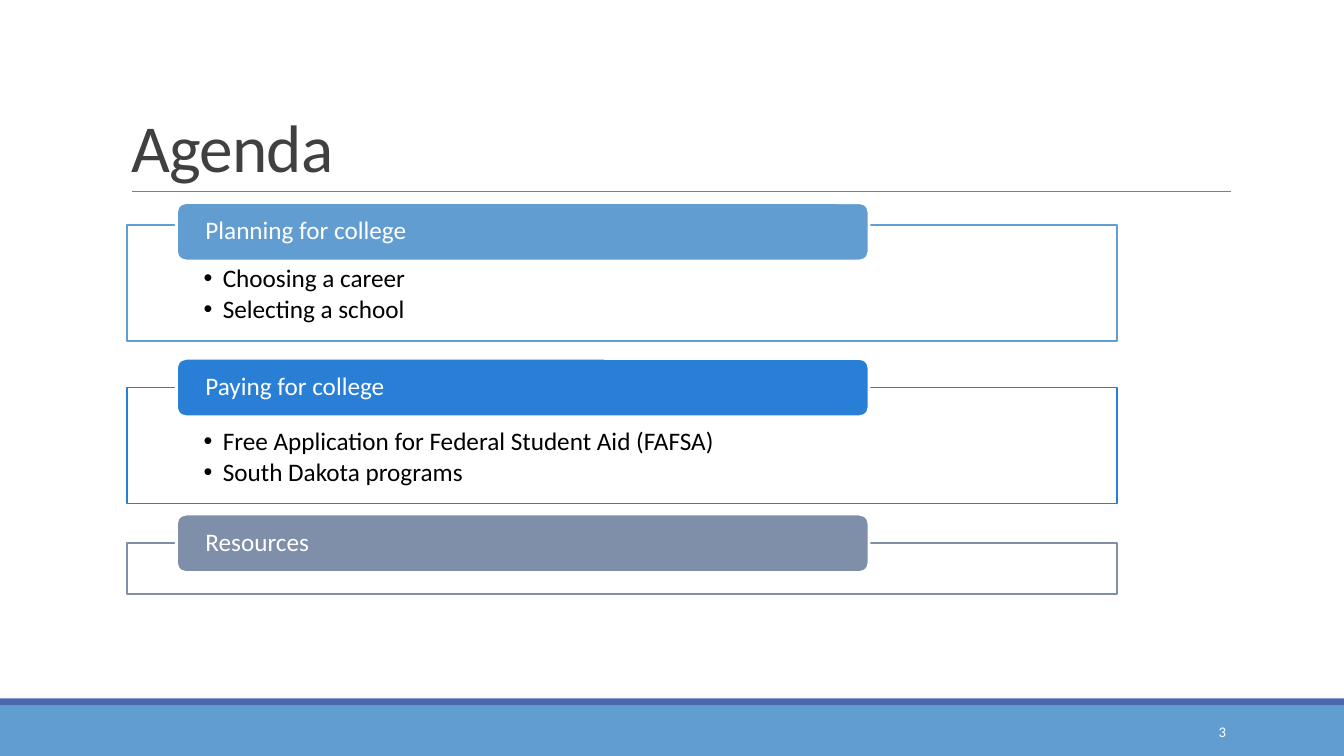
from dataclasses import dataclass

from lxml.etree import SubElement
from pptx import Presentation
from pptx.dml.color import RGBColor
from pptx.enum.shapes import MSO_CONNECTOR, MSO_SHAPE
from pptx.enum.text import MSO_ANCHOR, MSO_AUTO_SIZE, PP_ALIGN
from pptx.oxml.ns import qn
from pptx.util import Inches, Pt

TITLE = "Agenda"
PAGE_NUMBER = "3"
# heading, topics, accent, drop of the panel below the top of its tab, panel height
SECTIONS = [
    ("Planning for college", ["Choosing a career", "Selecting a school"], "629DD1", 0.22, 1.15),
    ("Paying for college",
     ["Free Application for Federal Student Aid (FAFSA)", "South Dakota programs"],
     "297FD5", 0.29, 1.15),
    ("Resources", [], "7F8FA9", 0.29, 0.5),
]


@dataclass(frozen=True)
class Theme:
    font: str = "Calibri"
    white: str = "FFFFFF"
    body: str = "000000"
    title: str = "404040"
    rule: str = "808080"
    footer: str = "629DD1"
    stripe: str = "4A66AC"
    title_size: float = 48
    text_size: float = 18
    number_size: float = 10.5


THEME = Theme()
WIDTH, HEIGHT = 13.33, 7.5
FOOTER_HEIGHT, STRIPE_HEIGHT = 0.5, 0.07
PANEL_LEFT, PANEL_WIDTH = 1.26, 9.82
TAB_LEFT, TAB_WIDTH, TAB_HEIGHT = 1.75, 6.87, 0.58
FIRST_TAB_TOP, TAB_PITCH = 2.01, 1.545
BULLET_INDENT = 0.19


def color(value):
    return RGBColor.from_string(value)


def add_box(slide, kind, box, fill, line=None, line_width=1.0, opacity=None):
    shape = slide.shapes.add_shape(kind, *map(Inches, box))
    shape.shadow.inherit = False
    shape.fill.solid()
    shape.fill.fore_color.rgb = color(fill)
    if opacity is not None:
        srgb = shape.fill._xPr.find(qn("a:solidFill")).find(qn("a:srgbClr"))
        SubElement(srgb, qn("a:alpha"), val=str(opacity * 1000))
    if line:
        shape.line.color.rgb = color(line)
        shape.line.width = Pt(line_width)
    else:
        shape.line.fill.background()
    return shape


def write(shape, lines, *, size, ink, align=PP_ALIGN.LEFT, anchor=MSO_ANCHOR.MIDDLE,
          insets=(0.1, 0.05, 0.1, 0.05), spacing=1.0, after=0, bullet=False, tracking=None):
    frame = shape.text_frame
    frame.word_wrap = True
    frame.auto_size = MSO_AUTO_SIZE.NONE
    frame.vertical_anchor = anchor
    (frame.margin_left, frame.margin_top,
     frame.margin_right, frame.margin_bottom) = map(Inches, insets)
    for index, line in enumerate(lines):
        paragraph = frame.add_paragraph() if index else frame.paragraphs[0]
        paragraph.alignment = align
        paragraph.line_spacing = spacing
        paragraph.space_before = Pt(0)
        paragraph.space_after = Pt(after)
        run = paragraph.add_run()
        run.text = line
        run.font.name = THEME.font
        run.font.size = Pt(size)
        run.font.color.rgb = color(ink)
        if tracking is not None:
            run.font._element.set("spc", str(int(tracking * 100)))
        if bullet:
            properties = paragraph._p.get_or_add_pPr()
            properties.set("marL", str(Inches(BULLET_INDENT)))
            properties.set("indent", str(-Inches(BULLET_INDENT)))
            SubElement(properties, qn("a:buFont"), typeface="Arial")
            SubElement(properties, qn("a:buChar"), char="•")


def add_frame(slide):
    """Footer bands, title, title rule and page number."""
    footer_top = HEIGHT - FOOTER_HEIGHT
    add_box(slide, MSO_SHAPE.RECTANGLE, (0, footer_top, WIDTH, FOOTER_HEIGHT), THEME.footer)
    add_box(slide, MSO_SHAPE.RECTANGLE,
            (0, footer_top - STRIPE_HEIGHT, WIDTH, STRIPE_HEIGHT), THEME.stripe)

    rule = slide.shapes.add_connector(
        MSO_CONNECTOR.STRAIGHT, *map(Inches, (1.31, 1.9, 12.21, 1.9)))
    rule.line.color.rgb = color(THEME.rule)
    rule.line.width = Pt(0.5)
    SubElement(rule._element.spPr, qn("a:effectLst"))

    title = slide.shapes.title
    title.left, title.top, title.width, title.height = map(Inches, (1.2, 0.31, 11, 1.59))
    write(title, [TITLE], size=THEME.title_size, ink=THEME.title,
          anchor=MSO_ANCHOR.BOTTOM, spacing=0.85, tracking=-0.5)

    number = slide.shapes.add_textbox(*map(Inches, (10.83, 7.06, 1.43, 0.4)))
    write(number, [PAGE_NUMBER], size=THEME.number_size, ink=THEME.white, align=PP_ALIGN.RIGHT)


def add_section(slide, tab_top, heading, topics, accent, panel_drop, panel_height):
    panel = add_box(slide, MSO_SHAPE.RECTANGLE,
                    (PANEL_LEFT, tab_top + panel_drop, PANEL_WIDTH, panel_height),
                    THEME.white, line=accent, line_width=1.25, opacity=90)
    if topics:
        write(panel, topics, size=THEME.text_size, ink=THEME.body, anchor=MSO_ANCHOR.TOP,
              insets=(0.76, 0.41, 0.76, 0.14), spacing=0.9, after=2.7, bullet=True)
    tab = add_box(slide, MSO_SHAPE.ROUNDED_RECTANGLE,
                  (TAB_LEFT, tab_top, TAB_WIDTH, TAB_HEIGHT),
                  accent, line=THEME.white, line_width=2)
    write(tab, [heading], size=THEME.text_size, ink=THEME.white,
          insets=(0.26, 0, 0.26, 0), spacing=0.9)


def main():
    deck = Presentation()
    deck.slide_width, deck.slide_height = Inches(WIDTH), Inches(HEIGHT)
    slide = deck.slides.add_slide(deck.slide_layouts.get_by_name("Title Only"))
    add_frame(slide)
    for row, section in enumerate(SECTIONS):
        add_section(slide, FIRST_TAB_TOP + row * TAB_PITCH, *section)
    deck.save("out.pptx")


if __name__ == "__main__":
    main()
